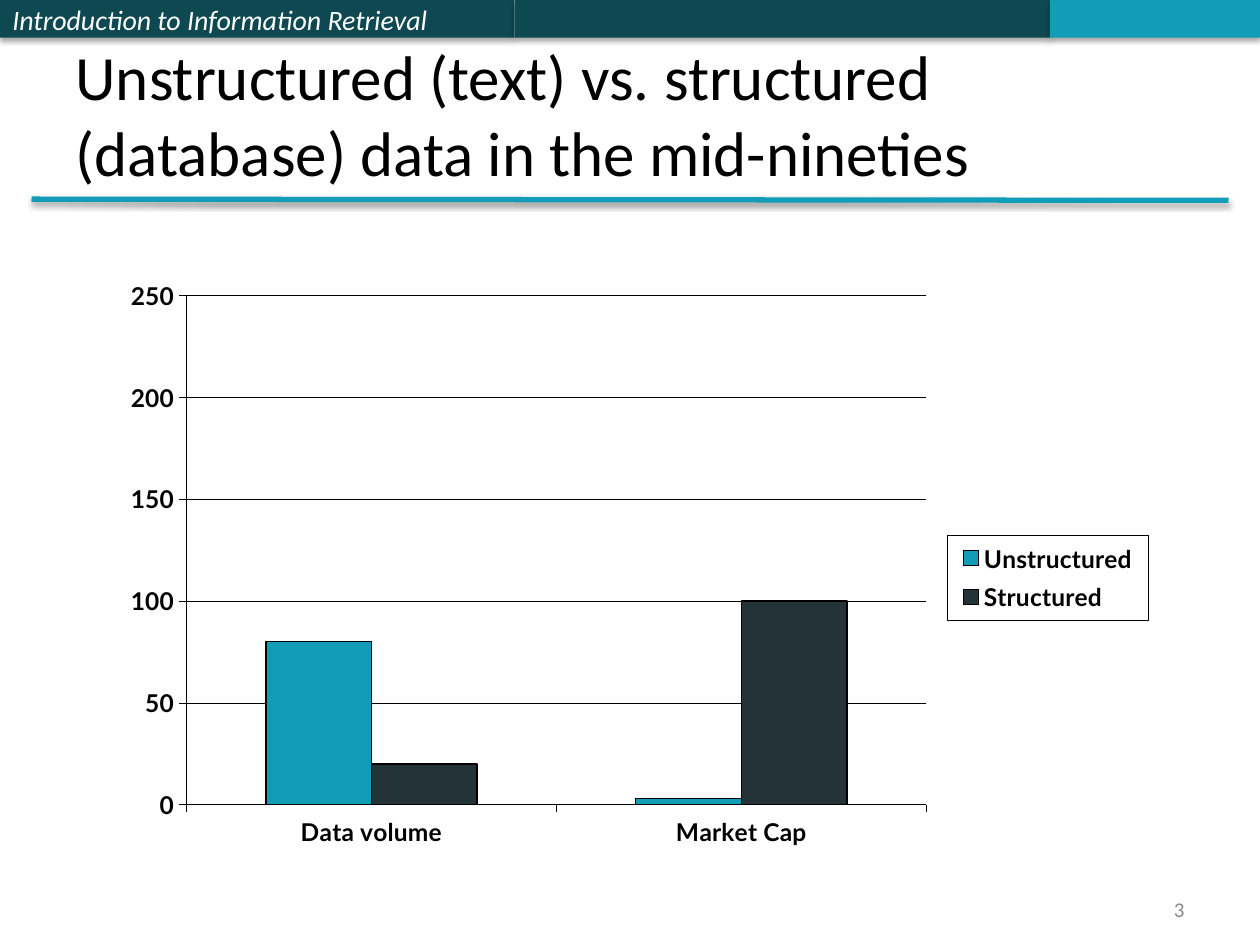
import pptx
import pptx.chart.data
import pptx.dml.color
import pptx.enum.chart
import pptx.enum.shapes
import pptx.enum.text
import pptx.oxml
import pptx.oxml.ns
import pptx.util

Pt = pptx.util.Pt
DARK, TEAL, SLATE = "0E4851", "139CB7", "233337"
BLACK, WHITE, GREY = "000000", "FFFFFF", "898989"


def color(hex_string):
    return pptx.dml.color.RGBColor.from_string(hex_string)


def set_line(line, hex_string, width):
    line.color.rgb = color(hex_string)
    line.width = Pt(width)


def set_font(font, name, size, hex_string, bold=False, italic=False):
    font.name = name
    font.size = Pt(size)
    font.color.rgb = color(hex_string)
    font.bold = bold
    font.italic = italic


def add_shadow(shape, distance, opacity):
    """Give a shape or connector a soft shadow falling straight down."""
    shape._element.spPr.append(pptx.oxml.parse_xml(
        f'<a:effectLst {pptx.oxml.ns.nsdecls("a")}>'
        f'<a:outerShdw blurRad="{Pt(3.1)}" dist="{Pt(distance)}" dir="5400000" rotWithShape="0">'
        f'<a:srgbClr val="{BLACK}"><a:alpha val="{opacity * 1000}"/></a:srgbClr>'
        '</a:outerShdw></a:effectLst>'))


def write(frame, text, size, hex_string, align, anchor, italic=False):
    frame.word_wrap = True
    frame.auto_size = pptx.enum.text.MSO_AUTO_SIZE.NONE
    frame.vertical_anchor = anchor
    frame.text = text
    para = frame.paragraphs[0]
    para.alignment = align
    set_font(para.runs[0].font, "Calibri", size, hex_string, italic=italic)


def add_band(page, left, width, fill):
    box = page.shapes.add_shape(pptx.enum.shapes.MSO_SHAPE.RECTANGLE,
                                Pt(left), Pt(0), Pt(width), Pt(21.6))
    box.fill.solid()
    box.fill.fore_color.rgb = color(fill)
    box.line.fill.background()
    add_shadow(box, 1.8, 35)
    return box


def add_rule(page):
    rule = page.shapes.add_connector(pptx.enum.shapes.MSO_CONNECTOR.STRAIGHT,
                                     Pt(18), Pt(113.8), Pt(702), Pt(114.5))
    set_line(rule.line, TEAL, 3)
    add_shadow(rule, 1.6, 38)


def set_layout(element, index, x, y, width, height, target=""):
    """Place a chart part by fractions of the chart area."""
    for old in element.findall(pptx.oxml.ns.qn("c:layout")):
        element.remove(old)
    sizes = "".join(f'<c:{tag} val="{value}"/>' for tag, value in
                    zip("xywh", (x, y, width, height)))
    element.insert(index, pptx.oxml.parse_xml(
        f'<c:layout {pptx.oxml.ns.nsdecls("c")}><c:manualLayout>{target}'
        f'<c:xMode val="edge"/><c:yMode val="edge"/>{sizes}</c:manualLayout></c:layout>'))


def format_axis(axis):
    axis.major_tick_mark = pptx.enum.chart.XL_TICK_MARK.OUTSIDE
    axis.minor_tick_mark = pptx.enum.chart.XL_TICK_MARK.NONE
    set_font(axis.tick_labels.font, "Lato", 14, BLACK, bold=True)
    set_line(axis.format.line, BLACK, 0.23)


def format_legend(chart):
    chart.has_legend = True
    legend = chart.legend
    legend.position = pptx.enum.chart.XL_LEGEND_POSITION.RIGHT
    legend.include_in_layout = False
    set_font(legend.font, "Lato", 14, BLACK, bold=True)
    set_layout(legend._element, 1, 0.8, 0.43, 0.19, 0.14)
    border = pptx.oxml.parse_xml(
        f'<c:spPr {pptx.oxml.ns.nsdecls("c", "a")}><a:ln w="{Pt(0.23)}"><a:solidFill>'
        f'<a:srgbClr val="{BLACK}"/></a:solidFill></a:ln></c:spPr>')
    legend._element.find(pptx.oxml.ns.qn("c:txPr")).addprevious(border)


def add_column_chart(page):
    data = pptx.chart.data.CategoryChartData()
    data.categories = ["Data volume", "Market Cap"]
    data.add_series("Unstructured", (80, 3))
    data.add_series("Structured", (20, 100))
    chart = page.shapes.add_chart(pptx.enum.chart.XL_CHART_TYPE.COLUMN_CLUSTERED,
                                  Pt(58.3), Pt(154.8), Pt(604), Pt(350.6), data).chart
    chart.has_title = False
    set_font(chart.font, "Lato", 8.5, BLACK, bold=True)

    # Columns
    plot = chart.plots[0]
    plot.vary_by_categories = False
    plot.gap_width = 150
    plot.overlap = 0
    for series, fill in zip(plot.series, (TEAL, SLATE)):
        series.format.fill.solid()
        series.format.fill.fore_color.rgb = color(fill)
        set_line(series.format.line, BLACK, 0.92)

    # Axes and gridlines
    format_axis(chart.category_axis)
    format_axis(chart.value_axis)
    chart.category_axis.tick_label_position = pptx.enum.chart.XL_TICK_LABEL_POSITION.LOW
    chart.value_axis.minimum_scale = 0
    chart.value_axis.maximum_scale = 250
    chart.value_axis.major_unit = 50
    set_line(chart.value_axis.major_gridlines.format.line, BLACK, 0.23)

    format_legend(chart)
    plot_area = chart._chartSpace.chart.plotArea
    set_layout(plot_area, 0, 0.08, 0.04, 0.7, 0.83, '<c:layoutTarget val="inner"/>')


def main():
    align = pptx.enum.text.PP_ALIGN
    anchor = pptx.enum.text.MSO_ANCHOR
    deck = pptx.Presentation()
    deck.slide_width, deck.slide_height = Pt(720), Pt(540)
    page = deck.slides.add_slide(deck.slide_layouts[5])

    # Header bands and rule
    header = add_band(page, 0, 294, DARK)
    write(header.text_frame, "Introduction to Information Retrieval", 16, WHITE,
          align.LEFT, anchor.MIDDLE, italic=True)
    add_band(page, 294, 306, DARK)
    add_band(page, 600, 120, TEAL)
    add_rule(page)

    # Title
    title = page.shapes.title
    title.left, title.top, title.width, title.height = Pt(36), Pt(21.6), Pt(648), Pt(90)
    write(title.text_frame, "Unstructured (text) vs. structured (database) data in the mid-nineties",
          36, BLACK, align.LEFT, anchor.BOTTOM)

    # Page number
    number = page.shapes.add_textbox(Pt(516), Pt(510), Pt(168), Pt(19.5))
    write(number.text_frame, "3", 12, GREY, align.RIGHT, anchor.MIDDLE)

    add_column_chart(page)
    deck.save("out.pptx")


if __name__ == "__main__":
    main()
